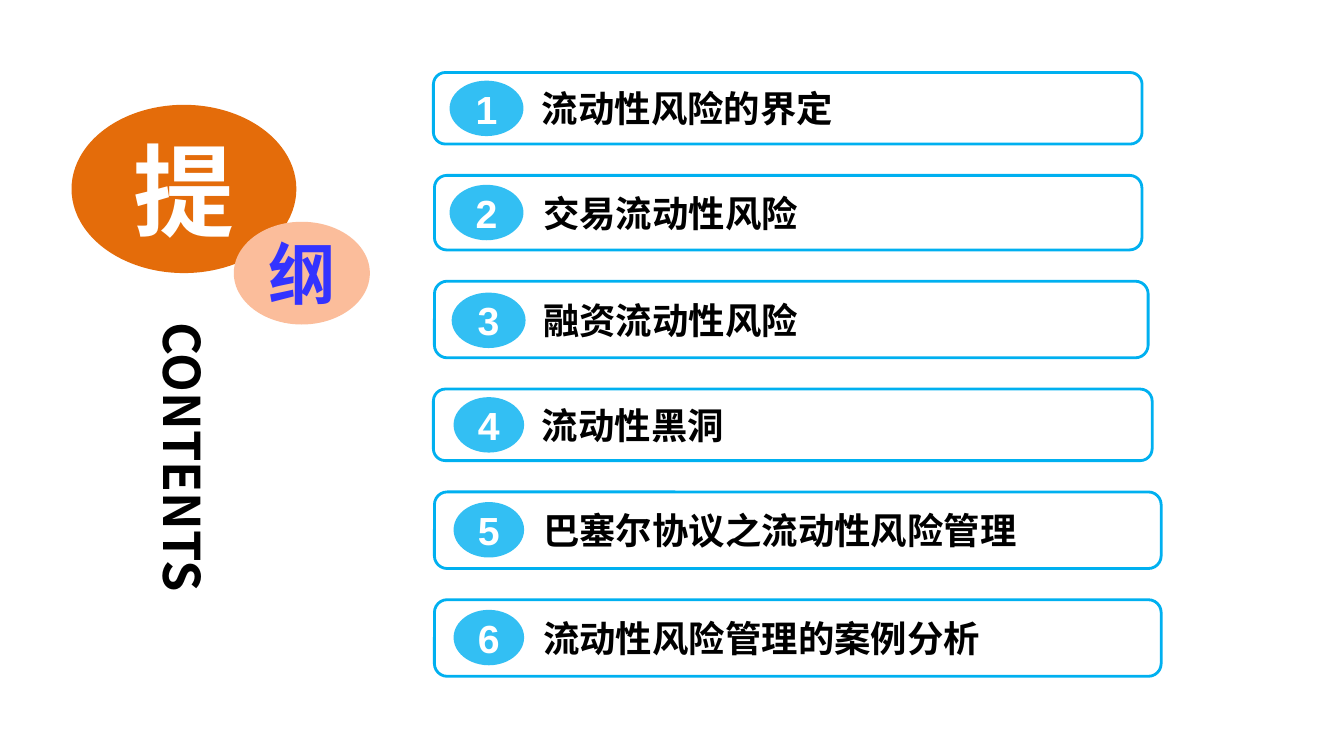
from lxml.etree import SubElement
from pptx import Presentation
from pptx.dml.color import RGBColor
from pptx.enum.shapes import MSO_SHAPE as Kind
from pptx.enum.text import MSO_ANCHOR as Anchor, PP_ALIGN as Align
from pptx.oxml.ns import qn
from pptx.util import Pt

WHITE = RGBColor(0xFF, 0xFF, 0xFF)
BLACK = RGBColor(0, 0, 0)
SKY = RGBColor(0x00, 0xB0, 0xF0)
ORANGE = RGBColor(0xE4, 0x6C, 0x0A)
PEACH = RGBColor(0xFB, 0xBD, 0x9B)
BLUE = RGBColor(0x33, 0x33, 0xFF)
HAN = "Noto Sans CJK SC"


def add_form(kind, box, fill):
    form = slide.shapes.add_shape(kind, *map(Pt, box))
    form.shadow.inherit = False
    form.fill.solid()
    form.fill.fore_color.rgb = fill
    form.line.fill.background()
    return form


def put_text(form, text, size, color, face=HAN, align=Align.CENTER, left=0, wrap=True):
    frame = form.text_frame
    layout = {"word_wrap": wrap, "vertical_anchor": Anchor.MIDDLE, "margin_left": Pt(left),
              "margin_right": 0, "margin_top": 0, "margin_bottom": 0}
    for key, value in layout.items():
        setattr(frame, key, value)
    para = frame.paragraphs[0]
    para.alignment = align
    run = para.add_run()
    run.text = text
    for key, value in {"name": face, "size": Pt(size), "bold": True}.items():
        setattr(run.font, key, value)
    run.font.color.rgb = color
    SubElement(run._r.get_or_add_rPr(), qn("a:ea")).set("typeface", face)


deck = Presentation()
deck.slide_width, deck.slide_height = Pt(960), Pt(540)
slide = deck.slides.add_slide(deck.slide_layouts[6])

# Agenda rows: text, bar box, badge left, top and width
rows = [
    ("流动性风险的界定", (309.6, 51.8, 506.2, 51.1), (321.1, 57.6, 52.8)),
    ("交易流动性风险", (310.3, 125.3, 505.4, 53.3), (321.1, 132, 52.8)),
    ("融资流动性风险", (310.3, 200.9, 509.8, 54.7), (322.6, 209, 52.8)),
    ("流动性黑洞", (309.6, 277.9, 513.4, 51.1), (324, 283.7, 50.4)),
    ("巴塞尔协议之流动性风险管理", (310.3, 351.4, 519.1, 54.7), (324, 358.6, 50.4)),
    ("流动性风险管理的案例分析", (310.3, 428.4, 519.1, 54.7), (324, 435.6, 50.4)),
]
for num, (topic, box, spot) in enumerate(rows, 1):
    bar = add_form(Kind.ROUNDED_RECTANGLE, box, WHITE)
    bar.line.color.rgb = SKY
    bar.line.width = Pt(2)
    put_text(bar, topic, 26, BLACK, align=Align.LEFT, left=75)
    badge = add_form(Kind.OVAL, (*spot, 39.6), SKY)
    tint = badge.fill._xPr.find(qn("a:solidFill"))[0]
    SubElement(tint, qn("a:alpha")).set("val", "80000")
    put_text(badge, str(num), 28, WHITE, "Arial", wrap=False)

# Title ovals
big = add_form(Kind.OVAL, (51.1, 74.9, 160.6, 120.2), ORANGE)
put_text(big, "提", 72, WHITE)
small = add_form(Kind.OVAL, (167, 158.4, 97.2, 73.4), PEACH)
put_text(small, "纲", 48, BLUE)

# Vertical caption
label = slide.shapes.add_textbox(Pt(99.4), Pt(230.4), Pt(64), Pt(216))
put_text(label, "CONTENTS", 36, BLACK, align=Align.LEFT)
label.text_frame._txBody.bodyPr.set("vert", "eaVert")

deck.save("out.pptx")
